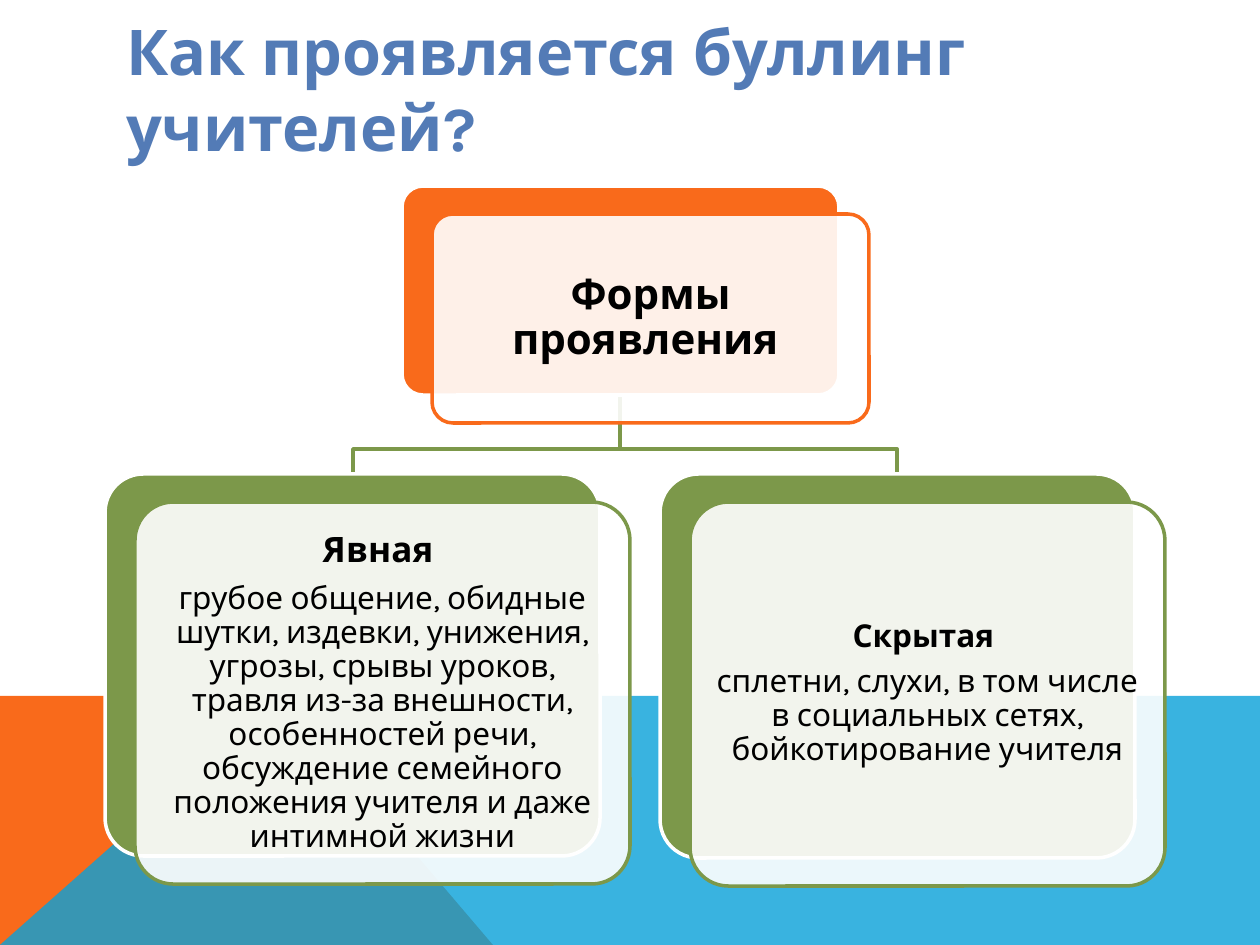
import pptx
import pptx.util
import pptx.dml.color
import pptx.enum.shapes
import pptx.enum.text
import pptx.oxml
import pptx.oxml.ns

UNIT = 914400 / 126
FONT = "Karla"
ORANGE, GREEN, BLUE, WHITE = "F96A1B", "7C984A", "08A1D9", "FFFFFF"
ALIGN = pptx.enum.text.PP_ALIGN


def px(*nums):
    return [pptx.util.Emu(round(n * UNIT)) for n in nums]


def hue(text):
    return pptx.dml.color.RGBColor.from_string(text)


def paint(shape, fill=None, line=None, alpha=100):
    shape.shadow.inherit = False
    if fill:
        shape.fill.solid()
        shape.fill.fore_color.rgb = hue(fill)
        if alpha < 100:
            tint = shape.fill._xPr.find(".//" + pptx.oxml.ns.qn("a:srgbClr"))
            node = pptx.oxml.parse_xml(
                '<a:alpha %s val="%d"/>' % (pptx.oxml.ns.nsdecls("a"), alpha * 1000))
            tint.append(node)
    else:
        shape.fill.background()
    if line:
        shape.line.color.rgb = hue(line)
        shape.line.width = pptx.util.Pt(2)
    else:
        shape.line.fill.background()


def write(para, text, size, color="000000", bold=False, align=ALIGN.CENTER,
          space=0.9, after=0):
    para.alignment = align
    para.line_spacing = space
    para.space_after = pptx.util.Pt(after)
    run = para.add_run()
    run.text = text
    run.font.name = FONT
    run.font.size = pptx.util.Pt(size)
    run.font.bold = bold
    run.font.color.rgb = hue(color)


def frame(shape, inset):
    body = shape.text_frame
    body.word_wrap = True
    body.auto_size = pptx.enum.text.MSO_AUTO_SIZE.NONE
    body.vertical_anchor = pptx.enum.text.MSO_ANCHOR.MIDDLE
    gap = px(inset)[0]
    body.margin_left = body.margin_right = gap
    body.margin_top = body.margin_bottom = gap
    return body


def outline(slide, points, closed=False, **look):
    pen = slide.shapes.build_freeform(*points[0], scale=UNIT)
    pen.add_line_segments(points[1:], close=closed)
    paint(pen.convert_to_shape(), **look)


def panel(slide, box, **look):
    kind = pptx.enum.shapes.MSO_SHAPE.ROUNDED_RECTANGLE
    shape = slide.shapes.add_shape(kind, *px(*box))
    shape.adjustments[0] = 0.1
    paint(shape, **look)


def card(slide, box, color, pad, inset, lines):
    left, top, wide, high = box
    left_in, top_in = left + 30, top + 28
    panel(slide, box, fill=color, line=WHITE)
    panel(slide, (left_in, top_in, wide, high), fill=WHITE, line=color, alpha=90)
    note = slide.shapes.add_textbox(
        *px(left_in + pad, top_in + pad, wide - 2 * pad, high - 2 * pad))
    body = frame(note, inset)
    for num, (text, size, bold) in enumerate(lines):
        para = body.add_paragraph() if num else body.paragraphs[0]
        write(para, text, size, bold=bold, after=round(size * 0.35, 1))


def main():
    deck = pptx.Presentation()
    deck.slide_width, deck.slide_height = px(1260, 945)
    slide = deck.slides.add_slide(deck.slide_layouts[5])

    outline(slide, [(0, 945), (0, 696), (281, 696), (493, 945)], True, fill=ORANGE)
    outline(slide, [(0, 945), (281, 696), (1260, 696), (1260, 945)], True,
            fill=BLUE, alpha=80)

    title = slide.shapes.title
    title.left, title.top, title.width, title.height = px(113, 50, 1036, 76)
    write(frame(title, 13).paragraphs[0], "Как проявляется буллинг учителей?", 36,
          color="537BB6", bold=True, align=ALIGN.LEFT, space=1.0)

    for end in (897, 353):
        outline(slide, [(620, 396), (620, 449), (end, 449), (end, 474)], line=GREEN)

    card(slide, (402, 186, 437, 209), ORANGE, 6, 13,
         [("Формы проявления ", 24, True)])
    card(slide, (105, 474, 495, 382), GREEN, 11, 10,
         [("Явная ", 20, True),
          ("грубое общение, обидные шутки, издевки, унижения, угрозы, "
           "срывы уроков, травля из-за внешности, особенностей речи, "
           "обсуждение семейного положения учителя и даже интимной жизни",
           18, False)])
    card(slide, (660, 474, 475, 384), GREEN, 11, 9,
         [("Скрытая ", 18, True),
          ("сплетни, слухи, в том числе в социальных сетях, "
           "бойкотирование учителя", 18, False)])
    deck.save("out.pptx")


if __name__ == "__main__":
    main()
